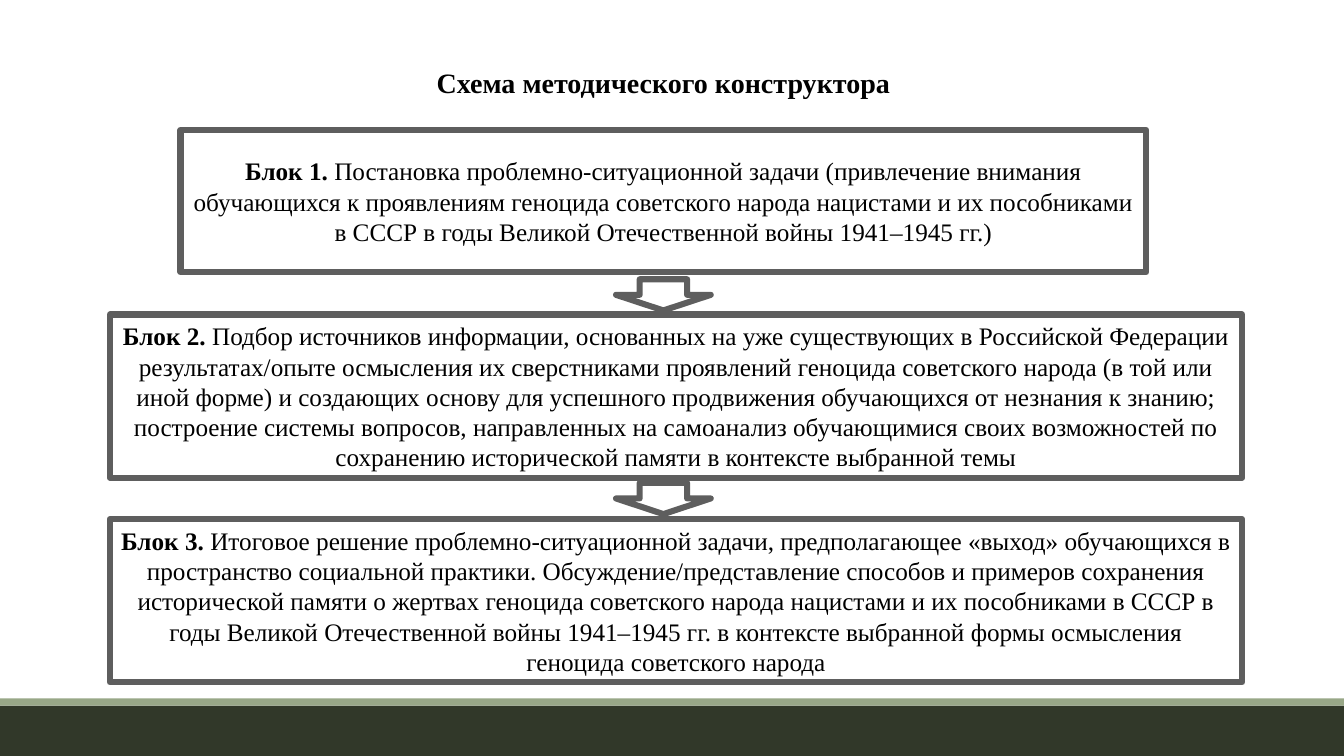
import pptx
import pptx.dml.color
import pptx.enum.shapes
import pptx.enum.text
import pptx.util

Inches = pptx.util.Inches
SHAPES = pptx.enum.shapes.MSO_SHAPE
INK, PAPER, OUTLINE = "000000", "FFFFFF", "5E5E5E"
FOOTER_BANDS = [(7, 0.5, "313829"), (6.93, 0.07, "98A787")]
ARROW_TOPS = [2.77, 4.79]
BLOCKS = [
    (
        (1.79, 1.29, 9.58, 1.41),
        "Блок 1. ",
        "Постановка проблемно-ситуационной задачи (привлечение внимания "
        "обучающихся к проявлениям геноцида советского народа нацистами и их "
        "пособниками в СССР в годы Великой Отечественной войны 1941–1945 гг.)",
    ),
    (
        (1.09, 3.12, 11.23, 1.62),
        "Блок 2. ",
        "Подбор источников информации, основанных на уже существующих в "
        "Российской Федерации результатах/опыте осмысления их сверстниками "
        "проявлений геноцида советского народа (в той или иной форме) и создающих "
        "основу для успешного продвижения обучающихся от незнания к знанию; "
        "построение системы вопросов, направленных на самоанализ обучающимися "
        "своих возможностей по сохранению исторической памяти в контексте "
        "выбранной темы",
    ),
    (
        (1.09, 5.15, 11.23, 1.62),
        "Блок 3. ",
        "Итоговое решение проблемно-ситуационной задачи, предполагающее «выход» "
        "обучающихся в пространство социальной практики. Обсуждение/представление "
        "способов и примеров сохранения исторической памяти о жертвах геноцида "
        "советского народа нацистами и их пособниками в СССР в годы Великой "
        "Отечественной войны 1941–1945 гг. в контексте выбранной формы осмысления "
        "геноцида советского народа",
    ),
]


def color(value):
    """Turn a hex string into a colour."""
    return pptx.dml.color.RGBColor.from_string(value)


def apply_format(target, values):
    """Set each attribute of the target from a dict."""
    for name, value in values.items():
        setattr(target, name, value)


def add_shape(page, kind, place, fill, outline=None):
    """Add a filled preset shape, with a thick outline if a colour is given."""
    box = page.shapes.add_shape(kind, *map(Inches, place))
    box.shadow.inherit = False
    box.fill.solid()
    box.fill.fore_color.rgb = color(fill)
    if outline:
        box.line.color.rgb = color(outline)
        box.line.width = pptx.util.Pt(4.33)
    else:
        box.line.fill.background()
    return box


def write(box, spans, size, anchor):
    """Write one centred paragraph from (text, bold) spans."""
    apply_format(box.text_frame, {"word_wrap": True, "vertical_anchor": anchor})
    para = box.text_frame.paragraphs[0]
    para.alignment = pptx.enum.text.PP_ALIGN.CENTER
    for text, bold in spans:
        span = para.add_run()
        span.text = text
        apply_format(
            span.font,
            {"name": "Times New Roman", "size": pptx.util.Pt(size), "bold": bold},
        )
        span.font.color.rgb = color(INK)


def main():
    """Build the slide and save it."""
    deck = pptx.Presentation()
    apply_format(
        deck, {"slide_width": Inches(13.33), "slide_height": Inches(7.5)}
    )
    page = deck.slides.add_slide(deck.slide_layouts[6])
    anchors = pptx.enum.text.MSO_ANCHOR

    for top, height, fill in FOOTER_BANDS:
        add_shape(page, SHAPES.RECTANGLE, (0, top, 13.33, height), fill)

    title = page.shapes.add_textbox(*map(Inches, (3.25, 0.6, 6.66, 0.44)))
    write(title, [("Схема методического конструктора", True)], 20, anchors.TOP)

    for place, label, text in BLOCKS:
        block = add_shape(page, SHAPES.RECTANGLE, place, PAPER, OUTLINE)
        write(block, [(label, True), (text, False)], 18, anchors.MIDDLE)

    for top in ARROW_TOPS:
        add_shape(page, SHAPES.DOWN_ARROW, (6.11, top, 0.94, 0.31), PAPER, OUTLINE)

    deck.save("out.pptx")


if __name__ == "__main__":
    main()
